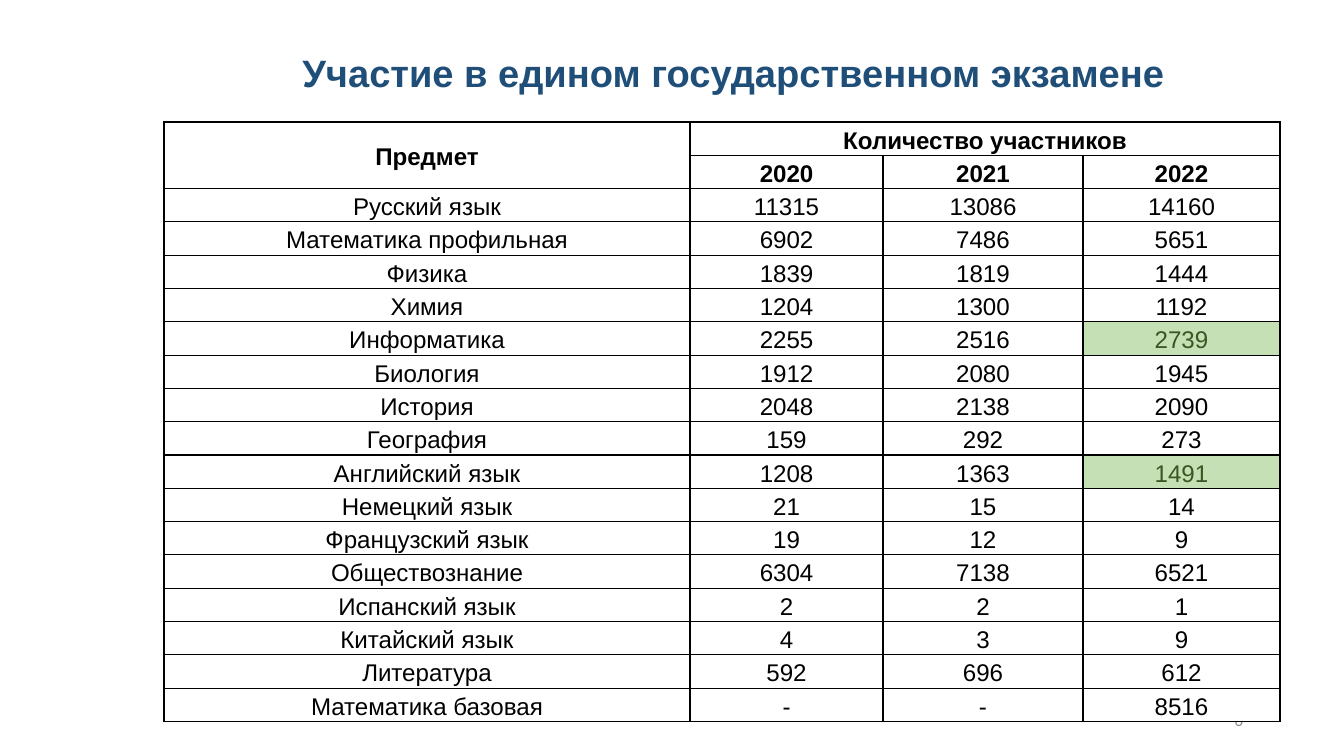
import pptx
import pptx.util
import pptx.dml.color
import pptx.enum.text
import pptx.oxml
import pptx.oxml.ns

RGB = pptx.dml.color.RGBColor
ALIGN = pptx.enum.text.PP_ALIGN
ANCHOR = pptx.enum.text.MSO_ANCHOR

TITLE = "Участие в едином государственном экзамене"
PAGE_NUMBER = "6"
HEADERS = [
    ("Предмет", "Количество участников", "", ""),
    ("", "2020", "2021", "2022"),
]
SUBJECTS = [
    ("Русский язык", "11315", "13086", "14160"),
    ("Математика профильная", "6902", "7486", "5651"),
    ("Физика", "1839", "1819", "1444"),
    ("Химия", "1204", "1300", "1192"),
    ("Информатика", "2255", "2516", "2739"),
    ("Биология", "1912", "2080", "1945"),
    ("История", "2048", "2138", "2090"),
    ("География", "159", "292", "273"),
    ("Английский язык", "1208", "1363", "1491"),
    ("Немецкий язык", "21", "15", "14"),
    ("Французский язык", "19", "12", "9"),
    ("Обществознание", "6304", "7138", "6521"),
    ("Испанский язык", "2", "2", "1"),
    ("Китайский язык", "4", "3", "9"),
    ("Литература", "592", "696", "612"),
    ("Математика базовая", "-", "-", "8516"),
]
GROWING = {"Информатика", "Английский язык"}
COLUMNS = [526, 193, 200, 197]
TABLE_LEFT, TABLE_TOP, TABLE_HEIGHT = 164, 122, 599

NAVY = RGB(0x1F, 0x4E, 0x79)
GRAY = RGB(0x8C, 0x8C, 0x8C)
BLACK = RGB(0, 0, 0)
WHITE = RGB(0xFF, 0xFF, 0xFF)
GREEN = RGB(0x38, 0x57, 0x23)
LIGHT_GREEN = RGB(0xC5, 0xE0, 0xB4)


def px(n):
    return pptx.util.Emu(n * 10000)


def place(sp, left, top, width, height):
    sp.left, sp.top, sp.width, sp.height = map(px, (left, top, width, height))


def write(tf, text, size, color, font="Arial", bold=False, align=ALIGN.CENTER):
    p = tf.paragraphs[0]
    p.text = text
    p.alignment = align
    p.font.name = font
    p.font.size = pptx.util.Pt(size)
    p.font.bold = bold
    p.font.color.rgb = color
    return p


def add_borders(cell):
    tc_pr = cell._tc.get_or_add_tcPr()
    for side in ("lnL", "lnR", "lnT", "lnB"):
        tc_pr.append(pptx.oxml.parse_xml(
            f'<a:{side} {pptx.oxml.ns.nsdecls("a")} w="12700"><a:solidFill>'
            f'<a:srgbClr val="{BLACK}"/></a:solidFill></a:{side}>'))


def fill_cell(cell, text, bold, highlighted):
    add_borders(cell)
    cell.fill.solid()
    cell.fill.fore_color.rgb = LIGHT_GREEN if highlighted else WHITE
    cell.vertical_anchor = ANCHOR.MIDDLE
    cell.margin_left = cell.margin_right = px(6)
    cell.margin_top = cell.margin_bottom = 0
    p = write(cell.text_frame, text, 19, GREEN if highlighted else BLACK, bold=bold)
    p.line_spacing = 1.15


def add_results_table(s):
    rows = HEADERS + SUBJECTS
    frame = s.shapes.add_table(len(rows), len(COLUMNS), px(TABLE_LEFT), px(TABLE_TOP),
                               px(sum(COLUMNS)), px(TABLE_HEIGHT))
    table = frame.table
    for column, width in zip(table.columns, COLUMNS):
        column.width = px(width)
    for i, row in enumerate(rows):
        table.rows[i].height = px(TABLE_HEIGHT) // len(rows)
        for j, text in enumerate(row):
            highlighted = row[0] in GROWING and j == len(COLUMNS) - 1
            fill_cell(table.cell(i, j), text, i < len(HEADERS), highlighted)
    table.cell(0, 0).merge(table.cell(1, 0))
    table.cell(0, 1).merge(table.cell(0, 3))


def main():
    prs = pptx.Presentation()
    prs.slide_width, prs.slide_height = px(1344), px(756)
    s = prs.slides.add_slide(prs.slide_layouts[5])

    title = s.shapes.title
    place(title, 155, 45, 1157, 56)
    tf = title.text_frame
    tf.word_wrap = True
    tf.auto_size = pptx.enum.text.MSO_AUTO_SIZE.NONE
    tf.vertical_anchor = ANCHOR.TOP
    write(tf, TITLE, 30, NAVY, bold=True)

    number = s.shapes.add_textbox(px(949), px(700), px(303), px(40))
    number.text_frame.word_wrap = True
    number.text_frame.vertical_anchor = ANCHOR.MIDDLE
    write(number.text_frame, PAGE_NUMBER, 13.2, GRAY, font="Calibri", align=ALIGN.RIGHT)

    add_results_table(s)
    prs.save("out.pptx")


if __name__ == "__main__":
    main()
